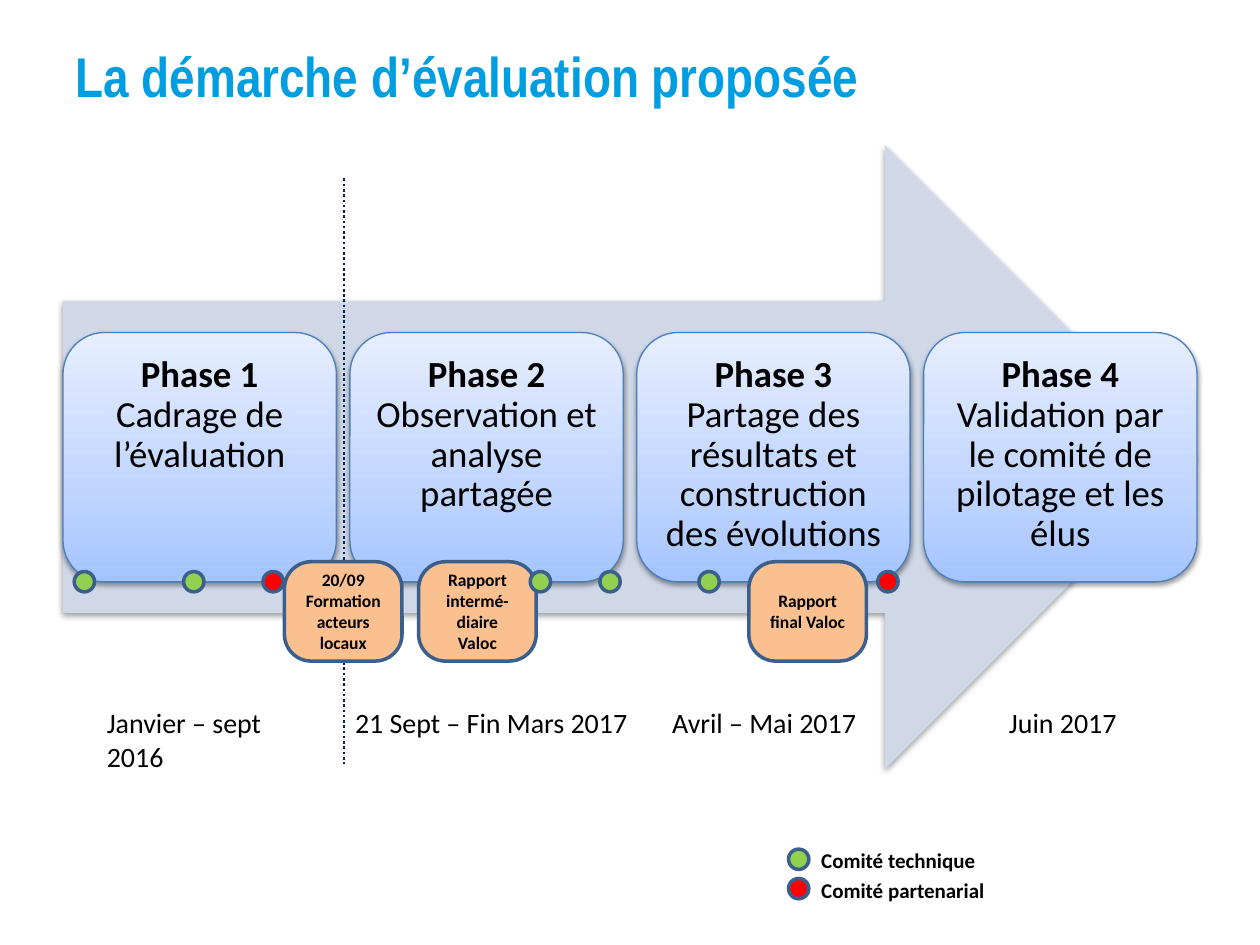
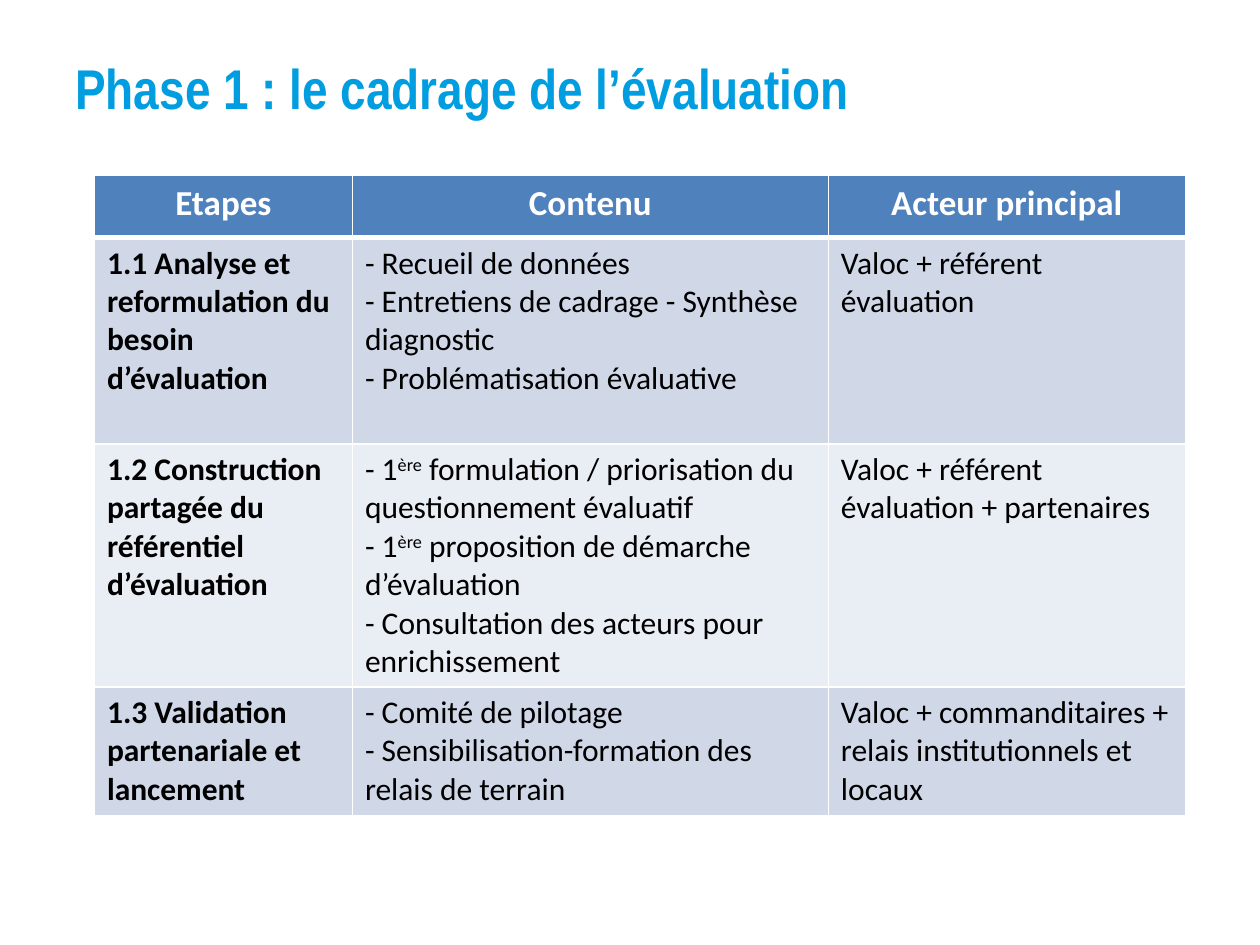
from copy import deepcopy
from dataclasses import dataclass

from lxml.etree import SubElement
from pptx import Presentation
from pptx.dml.color import RGBColor
from pptx.enum.dml import MSO_LINE
from pptx.enum.shapes import MSO_CONNECTOR, MSO_SHAPE
from pptx.enum.text import MSO_ANCHOR, PP_ALIGN
from pptx.oxml import parse_xml
from pptx.oxml.ns import nsdecls, qn
from pptx.util import Pt


@dataclass(frozen=True)
class Theme:
    head: str = "Arial Narrow"
    body: str = "Calibri"
    title: str = "009EE0"
    ink: str = "000000"
    white: str = "FFFFFF"
    band: str = "D0D8E8"
    pale: str = "E9EDF4"
    top: str = "4F81BD"
    edge: str = "4B7EBC"
    rim: str = "3A5F8C"
    rule: str = "002060"
    note: str = "FAC090"
    green: str = "92D050"
    red: str = "FF0000"
    blend: tuple = ((0, "A4C4FF"), (0.35, "BFD4FF"), (1, "E6EEFF"))
    huge: float = 32
    large: float = 21
    label: float = 20
    text: float = 18
    date: float = 16
    key: float = 12
    small: float = 10


def tint(code):
    return RGBColor.from_string(code)


class Deck:
    def __init__(self, theme):
        self.theme = theme
        self.show = Presentation()
        self.show.slide_width = Pt(720)
        self.show.slide_height = Pt(540)
        self.slide = None

    def page(self, title, top):
        self.slide = self.show.slides.add_slide(self.show.slide_layouts[6])
        box = self.text(36, top, 648, 90, title, self.theme.huge, bold=True,
                        color=self.theme.title, font=self.theme.head)
        box.text_frame.vertical_anchor = MSO_ANCHOR.MIDDLE

    def put(self, frame, text, size, bold=False, color=None, font=None, align=None):
        frame.word_wrap = True
        for i, line in enumerate(text.split("\n")):
            para = frame.paragraphs[0] if i == 0 else frame.add_paragraph()
            para.alignment = align
            for part in line.split("|"):
                run = para.add_run()
                run.text = part
                run.font.size = Pt(size)
                run.font.bold = bold
                run.font.name = font or self.theme.body
                run.font.color.rgb = tint(color or self.theme.ink)

    def text(self, left, top, width, height, text, size, **style):
        box = self.slide.shapes.add_textbox(Pt(left), Pt(top), Pt(width), Pt(height))
        self.put(box.text_frame, text, size, **style)
        return box

    def shape(self, kind, left, top, width, height, fill=None, line=None, weight=2):
        item = self.slide.shapes.add_shape(kind, Pt(left), Pt(top), Pt(width), Pt(height))
        item.shadow.inherit = False
        if fill:
            item.fill.solid()
            item.fill.fore_color.rgb = tint(fill)
        if line:
            item.line.color.rgb = tint(line)
            item.line.width = Pt(weight)
        else:
            item.line.fill.background()
        return item

    def shade(self, item):
        glow = SubElement(item._element.spPr.find(qn("a:effectLst")), qn("a:outerShdw"),
                          blurRad=str(Pt(3.1)), dist=str(Pt(1.6)),
                          dir="5400000", rotWithShape="0")
        hue = SubElement(glow, qn("a:srgbClr"), val=self.theme.ink)
        SubElement(hue, qn("a:alpha"), val="38000")

    def arrow(self, left, top, width, height):
        self.shade(self.shape(MSO_SHAPE.RIGHT_ARROW, left, top, width, height, self.theme.band))

    def card(self, left, top, width, height, text):
        item = self.shape(MSO_SHAPE.ROUNDED_RECTANGLE, left, top, width, height,
                          line=self.theme.edge, weight=0.75)
        item.fill.gradient()
        item.fill.gradient_angle = 90
        stops = item._element.spPr.find(qn("a:gradFill")).find(qn("a:gsLst"))
        stops.insert(1, deepcopy(stops[0]))
        for stop, (spot, code) in zip(item.fill.gradient_stops, self.theme.blend):
            stop.position = spot
            stop.color.rgb = tint(code)
        self.shade(item)
        pad = 7
        box = self.text(left + pad, top + pad, width - 2 * pad, height - 2 * pad,
                        text, self.theme.large, align=PP_ALIGN.CENTER)
        frame = box.text_frame
        frame.margin_left = frame.margin_right = Pt(6.5)
        frame.margin_top = frame.margin_bottom = Pt(6.5)
        para = frame.paragraphs[0]
        para.line_spacing = 0.9
        para.runs[0].font.bold = True

    def note(self, left, top, text):
        item = self.shape(MSO_SHAPE.ROUNDED_RECTANGLE, left, top, 67.2, 56.8,
                          self.theme.note, self.theme.rim)
        item.adjustments[0] = 0.27
        item.text_frame.vertical_anchor = MSO_ANCHOR.MIDDLE
        self.put(item.text_frame, text, self.theme.small, bold=True, align=PP_ALIGN.CENTER)

    def dot(self, left, top, fill):
        self.shape(MSO_SHAPE.FLOWCHART_CONNECTOR, left, top, 11.6, 11.6, fill, self.theme.rim)

    def rule(self, left, top, end):
        line = self.slide.shapes.add_connector(
            MSO_CONNECTOR.STRAIGHT, Pt(left), Pt(top), Pt(left), Pt(end))
        line.line.color.rgb = tint(self.theme.rule)
        line.line.width = Pt(1.5)
        line.line.dash_style = MSO_LINE.ROUND_DOT
        SubElement(line._element.spPr, qn("a:effectLst"))

    def edges(self, cell, row):
        thick = {"T": 3 if row == 1 else 1, "B": 3 if row == 0 else 1}
        for i, side in enumerate("LRTB"):
            cell._tc.get_or_add_tcPr().insert(i, parse_xml(
                f'<a:ln{side} {nsdecls("a")} w="{Pt(thick.get(side, 1))}"><a:solidFill>'
                f'<a:srgbClr val="{self.theme.white}"/></a:solidFill></a:ln{side}>'))

    def table(self, left, top, cols, rows, cells):
        theme = self.theme
        grid = self.slide.shapes.add_table(
            len(rows), len(cols), Pt(left), Pt(top), Pt(sum(cols)), Pt(sum(rows))).table
        for col, width in zip(grid.columns, cols):
            col.width = Pt(width)
        for r, (height, texts) in enumerate(zip(rows, cells)):
            grid.rows[r].height = Pt(height)
            for c, text in enumerate(texts):
                cell = grid.cell(r, c)
                cell.fill.solid()
                if r == 0:
                    fill = theme.top
                    self.put(cell.text_frame, text, theme.label, bold=True,
                             color=theme.white, align=PP_ALIGN.CENTER)
                else:
                    fill = theme.band if r % 2 else theme.pale
                    self.put(cell.text_frame, text, theme.text, bold=c == 0)
                cell.fill.fore_color.rgb = tint(fill)
                self.edges(cell, r)
                for para in cell.text_frame.paragraphs:
                    for run in para.runs[1::2]:
                        run._r.get_or_add_rPr().set("baseline", "30000")


def plan(deck):
    theme = deck.theme
    deck.page("La démarche d’évaluation proposée", -2)
    left, span, gap = 36, 648, 7.7
    deck.arrow(left, 83, span, 356.4)
    phases = [
        "Phase 1 |Cadrage de l’évaluation",
        "Phase 2 |Observation et analyse partagée",
        "Phase 3| Partage des résultats et construction des évolutions",
        "Phase 4| Validation par le comité de pilotage et les élus",
    ]
    width = (span - gap * (len(phases) - 1)) / len(phases)
    for i, text in enumerate(phases):
        deck.card(left + i * (width + gap), 190, width, 142.5, text)
    deck.rule(196.6, 102, 436.5)
    dates = [
        (54, 124.6, "Janvier – sept 2016"),
        (195.8, 181.4, "21 Sept – Fin Mars 2017"),
        (377, 147.6, "Avril – Mai 2017"),
        (569.5, 124.6, "Juin 2017"),
    ]
    for x, wide, text in dates:
        deck.text(x, 399.6, wide, 27, text, theme.date)
    notes = [
        (162.5, "20/09\nFormation acteurs locaux"),
        (239.2, "Rapport intermé-diaire Valoc"),
        (427.9, "Rapport final Valoc"),
    ]
    for x, text in notes:
        deck.note(x, 321, text)
    for x in (42.4, 104.9, 303, 342.8, 399.4):
        deck.dot(x, 326.6, theme.green)
    for x in (150.3, 501.6):
        deck.dot(x, 326.6, theme.red)
    keys = [(theme.green, "Comité technique"), (theme.red, "Comité partenarial")]
    for i, (fill, text) in enumerate(keys):
        y = 481 + i * 16.8
        deck.dot(450.6, y + 4.2, fill)
        deck.text(462.2, y, 124.6, 21.6, text, theme.key, bold=True)


def steps(deck):
    deck.page("Phase 1 : le cadrage de l’évaluation", 4.5)
    cells = [
        ("Etapes", "Contenu", "Acteur principal"),
        ("1.1 Analyse et reformulation du besoin d’évaluation",
         "- Recueil de données\n- Entretiens de cadrage - Synthèse diagnostic\n"
         "- Problématisation évaluative",
         "Valoc + référent évaluation"),
        ("1.2 Construction partagée du référentiel d’évaluation",
         "- 1|ère| formulation / priorisation du questionnement évaluatif\n"
         "- 1|ère| proposition de démarche d’évaluation\n"
         "- Consultation des acteurs pour enrichissement",
         "Valoc + référent évaluation + partenaires"),
        ("1.3 Validation partenariale et lancement",
         "- Comité de pilotage\n- Sensibilisation-formation des relais de terrain",
         "Valoc + commanditaires + relais institutionnels et locaux"),
    ]
    deck.table(54, 100.3, (147.4, 272, 204), (35.6, 118, 138.8, 73.6), cells)


def main():
    deck = Deck(Theme())
    plan(deck)
    steps(deck)
    deck.show.save("out.pptx")


if __name__ == "__main__":
    main()
